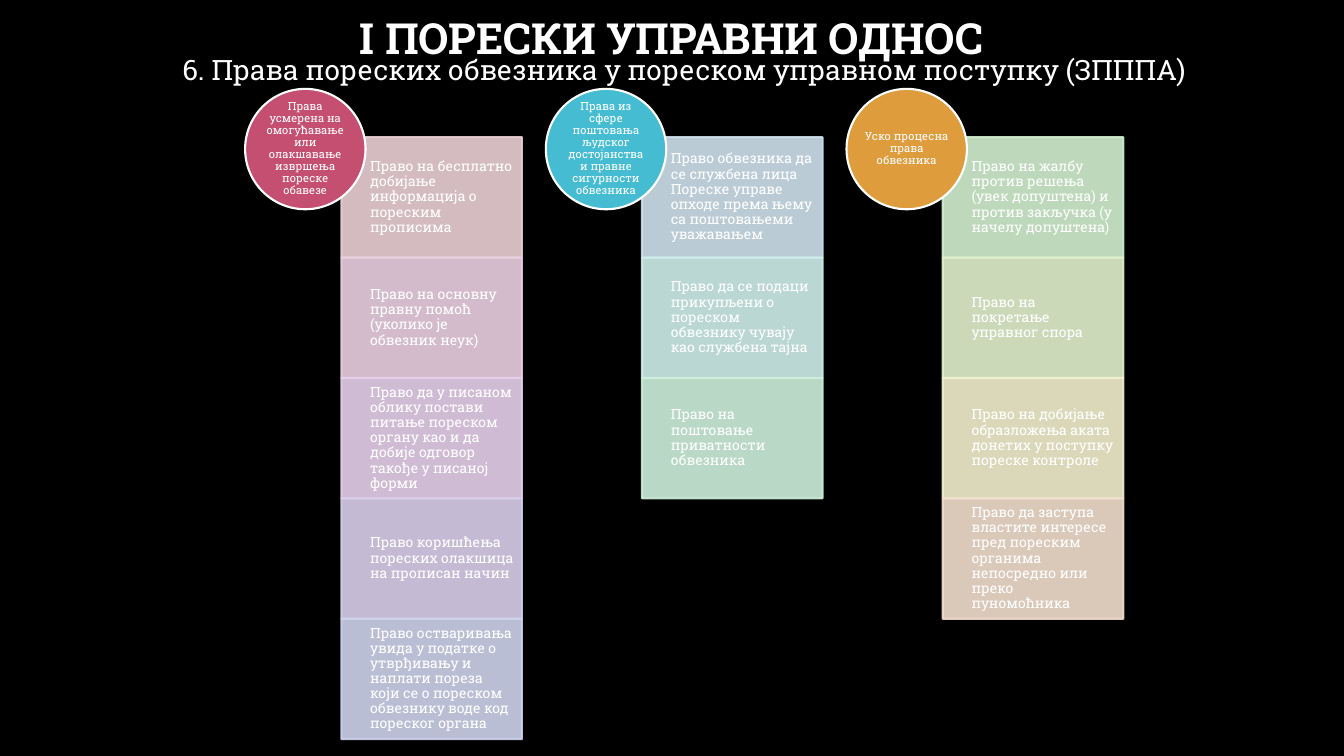
"""Build a slide of three columns listing taxpayer rights in tax procedure."""
import lxml.etree
import pptx
import pptx.dml.color
import pptx.enum.shapes
import pptx.enum.text
import pptx.oxml.ns
import pptx.util

Pt = pptx.util.Pt
RGBColor = pptx.dml.color.RGBColor
Shape = pptx.enum.shapes.MSO_SHAPE
Align = pptx.enum.text.PP_ALIGN
Anchor = pptx.enum.text.MSO_ANCHOR

TITLE = "I ПОРЕСКИ УПРАВНИ ОДНОС"
SUBTITLE = "6. Права пореских обвезника у пореском управном поступку (ЗПППА)"
COLUMNS = [
    ("Права усмерена на омогућавање или олакшавање извршења пореске обавезе",
     RGBColor(0xC5, 0x4F, 0x71), [
         ("Право на бесплатно добијање информација о пореским прописима",
          RGBColor(0xEA, 0xD0, 0xD5)),
         ("Право на основну правну помоћ (уколико је обвезник неук)",
          RGBColor(0xEB, 0xD0, 0xE2)),
         ("Право да у писаном облику постави питање пореском органу као и да "
          "добије одговор такође у писаној форми",
          RGBColor(0xE7, 0xD0, 0xEC)),
         ("Право коришћења пореских олакшица на прописан начин",
          RGBColor(0xDA, 0xCF, 0xEC)),
         ("Право остваривања увида у податке о утврђивању и наплати пореза "
          "који се о пореском обвезнику воде код пореског органа",
          RGBColor(0xCF, 0xD3, 0xED)),
     ]),
    ("Права из сфере поштовања људског достојанства и правне сигурности обвезника",
     RGBColor(0x45, 0xBC, 0xD2), [
         ("Право обвезника да се службена лица Пореске управе опходе према "
          "њему са поштовањеми уважавањем",
          RGBColor(0xCF, 0xE2, 0xEE)),
         ("Право да се подаци прикупљени о пореском обвезнику чувају као "
          "службена тајна",
          RGBColor(0xCF, 0xEF, 0xEB)),
         ("Право на поштовање приватности обвезника",
          RGBColor(0xCF, 0xF0, 0xDC)),
     ]),
    ("Уско процесна права обвезника",
     RGBColor(0xDE, 0x9C, 0x3C), [
         ("Право на жалбу против решења (увек допуштена) и против закључка "
          "(у начелу допуштена)",
          RGBColor(0xD2, 0xF0, 0xCF)),
         ("Право на покретање управног спора",
          RGBColor(0xE2, 0xF1, 0xCE)),
         ("Право на добијање образложења аката донетих у поступку пореске контроле",
          RGBColor(0xF2, 0xF0, 0xCE)),
         ("Право да заступа властите интересе пред пореским органима "
          "непосредно или преко пуномоћника",
          RGBColor(0xF2, 0xDE, 0xCE)),
     ]),
]

FONT = "Roboto Slab"
WHITE = RGBColor(0xFF, 0xFF, 0xFF)
BLACK = RGBColor(0, 0, 0)
CARD_LEFT, CARD_TOP, CARD_WIDTH, CARD_HEIGHT = 243.8, 98, 129, 86
COLUMN_STEP = 214.8
CIRCLE_SHIFT, CIRCLE_TOP, CIRCLE_SIZE = -68.7, 63.5, 86
CARD_INSETS = (20.6, 5.7, 5.7, 5.7)


def write(box, text, size, align=Align.CENTER, anchor=Anchor.MIDDLE,
          insets=(7.2, 3.6, 7.2, 3.6), spacing=0.9, before=0, bold=False):
    """Put one formatted paragraph into a box."""
    frame = box.text_frame
    frame.word_wrap = True
    frame.auto_size = pptx.enum.text.MSO_AUTO_SIZE.NONE
    frame.vertical_anchor = anchor
    (frame.margin_left, frame.margin_top,
     frame.margin_right, frame.margin_bottom) = map(Pt, insets)
    para = frame.paragraphs[0]
    para.alignment = align
    para.line_spacing = spacing
    para.space_before = Pt(before)
    span = para.add_run()
    span.text = text
    span.font.name = FONT
    span.font.size = Pt(size)
    span.font.bold = bold
    span.font.color.rgb = WHITE


def add_figure(page, kind, place, fill, line, opacity=100):
    """Add a filled and outlined shape."""
    figure = page.shapes.add_shape(kind, *map(Pt, place))
    figure.shadow.inherit = False
    figure.fill.solid()
    figure.fill.fore_color.rgb = fill
    figure.line.color.rgb = line
    figure.line.width = Pt(1.5)
    if opacity < 100:
        for color in figure.element.spPr.findall(".//" + pptx.oxml.ns.qn("a:srgbClr")):
            lxml.etree.SubElement(color, pptx.oxml.ns.qn("a:alpha"),
                                  val=str(opacity * 1000))
    return figure


def add_column(page, left, heading, accent, cards):
    """Stack the cards and lay the heading circle over their corner."""
    for row, (text, tint) in enumerate(cards):
        place = (left, CARD_TOP + row * CARD_HEIGHT, CARD_WIDTH, CARD_HEIGHT)
        card = add_figure(page, Shape.RECTANGLE, place, tint, tint, opacity=90)
        write(card, text, 10, align=Align.LEFT, insets=CARD_INSETS)
    place = (left + CIRCLE_SHIFT, CIRCLE_TOP, CIRCLE_SIZE, CIRCLE_SIZE)
    circle = add_figure(page, Shape.OVAL, place, accent, WHITE)
    write(circle, heading, 8, insets=(0, 0, 0, 0))


def main():
    """Assemble and save the deck."""
    deck = pptx.Presentation()
    deck.slide_width, deck.slide_height = Pt(960), Pt(540)
    page = deck.slides.add_slide(deck.slide_layouts[6])
    page.background.fill.solid()
    page.background.fill.fore_color.rgb = BLACK
    title = page.shapes.add_textbox(Pt(72), Pt(16.5), Pt(815), Pt(25))
    write(title, TITLE, 30.6, bold=True)
    subtitle = page.shapes.add_textbox(Pt(81.4), Pt(28.8), Pt(815), Pt(383))
    write(subtitle, SUBTITLE, 20, anchor=Anchor.TOP, spacing=1.2, before=10)
    for index, column in enumerate(COLUMNS):
        add_column(page, CARD_LEFT + index * COLUMN_STEP, *column)
    deck.save("out.pptx")


if __name__ == "__main__":
    main()
